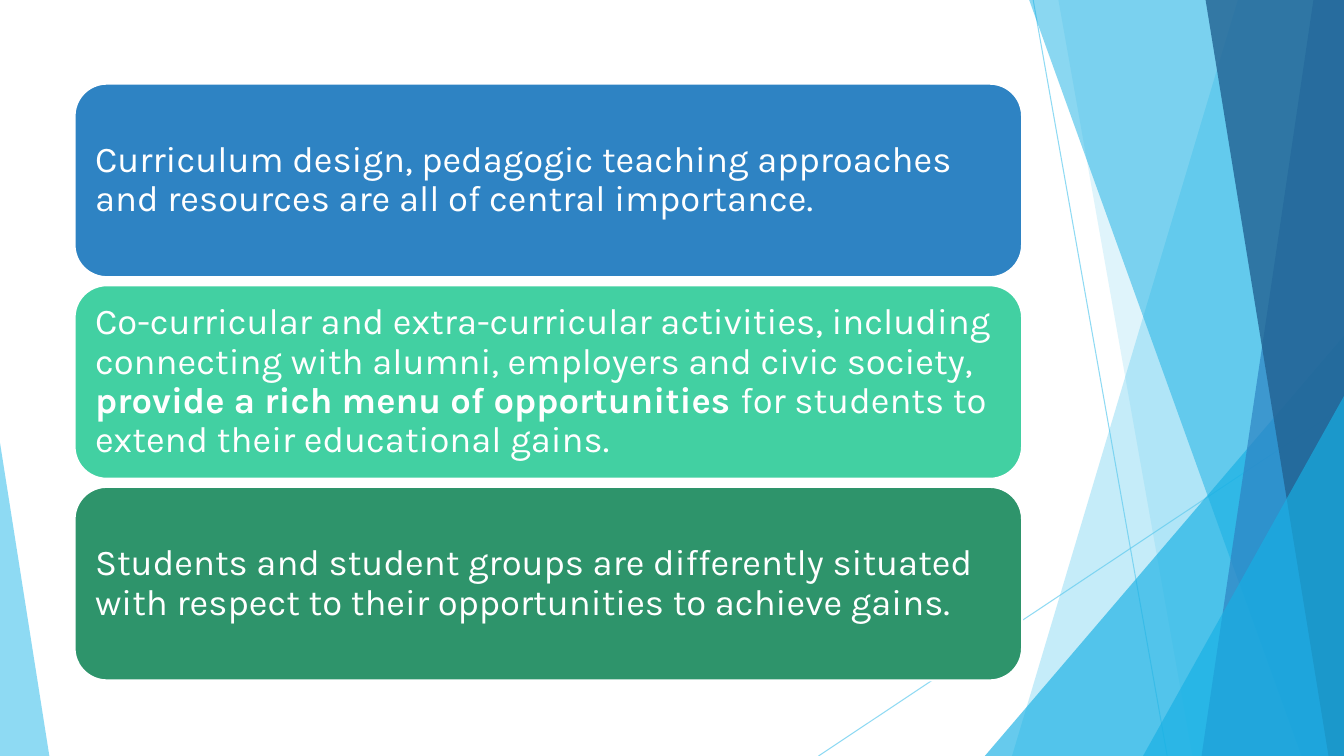
"""Build a slide with three stacked message cards and a faceted blue backdrop."""
from pptx import Presentation
from pptx.dml.color import RGBColor
from pptx.enum.shapes import MSO_CONNECTOR, MSO_SHAPE
from pptx.enum.text import MSO_ANCHOR, PP_ALIGN
from pptx.oxml.ns import qn
from pptx.util import Inches, Pt
from lxml.etree import SubElement

theme = {
    "sky": "5FCBEF", "cyan": "17B0E4", "blue": "2E83C3", "navy": "226292",
    "mint": "42D0A2", "green": "2E946B", "white": "FFFFFF",
    "font": "Karla", "size": Pt(26), "hair": Pt(0.75), "edge": Pt(1.5),
}

deck = Presentation()
deck.slide_width, deck.slide_height = Inches(13.33), Inches(7.5)
slide = deck.slides.add_slide(deck.slide_layouts[6])
shapes = slide.shapes
COLS, ROWS = 40, 30
col, row = deck.slide_width / COLS, deck.slide_height / ROWS


def grid(*spots):
    """Turn alternating columns and rows into slide lengths."""
    return [round(n * (row if i % 2 else col)) for i, n in enumerate(spots)]


def tint(fill, name, share=100):
    """Fill with a theme colour at a share of full opacity."""
    fill.solid()
    fill.fore_color.rgb = RGBColor.from_string(theme[name])
    if share < 100:
        tone = fill._xPr.find(qn("a:solidFill"))[0]
        SubElement(tone, qn("a:alpha"), val=str(share * 1000))


for ends in [(30.75, 0, 34.74, ROWS), (COLS, 16.12, 24.36, ROWS)]:
    ray = shapes.add_connector(MSO_CONNECTOR.STRAIGHT, *grid(*ends))
    ray.line.width = theme["hair"]
    tint(ray.line.fill, "sky", 70)
    SubElement(ray._element.spPr, qn("a:effectLst"))

facets = [
    ("panel", (36.84, 30.12), "sky", 36),
    ("panel", (31.5, 35.49), "sky", 20),
    ("peak", (29.31, 13.32, COLS, 1), "cyan", 66),
    ("panel", (30.63, 38.73), "cyan", 50),
    ("panel", (39.09, 35.76), "blue", 70),
    ("panel", (35.88, 39.54), "navy", 80),
    ("peak", (34.02, 15.72, COLS, 1), "cyan", 66),
    ("peak", (0, 17.56, 1.47, 0), "sky", 70),
]
for kind, place, tone, share in facets:
    if kind == "panel":
        head, foot = place
        pen = shapes.build_freeform(*grid(head, 0))
        pen.add_line_segments([grid(COLS, 0), grid(COLS, ROWS), grid(foot, ROWS)])
        facet = pen.convert_to_shape()
    else:
        left, top, right, tip = place
        box = grid(left, top, right - left, ROWS - top)
        facet = shapes.add_shape(MSO_SHAPE.ISOSCELES_TRIANGLE, *box)
        facet.adjustments[0] = tip
    facet.shadow.inherit = False
    facet.line.fill.background()
    tint(facet.fill, tone, share)

cards = [
    ("blue", [("Curriculum design, pedagogic teaching approaches and resources "
               "are all of central importance.", False)]),
    ("mint", [("Co-curricular and extra-curricular activities, including connecting "
               "with alumni, employers and civic society, ", False),
              ("provide a rich menu of opportunities ", True),
              ("for students to extend their educational gains.", False)]),
    ("green", [("Students and student groups are differently situated with respect "
                "to their opportunities to achieve gains.", False)]),
]
for rank, (tone, parts) in enumerate(cards):
    box = grid(2.22, 3.32 + 8 * rank, 28.2, 7.68)
    card = shapes.add_shape(MSO_SHAPE.ROUNDED_RECTANGLE, *box)
    card.shadow.inherit = False
    tint(card.fill, tone)
    tint(card.line.fill, "white")
    card.line.width = theme["edge"]
    frame = card.text_frame
    frame.word_wrap = True
    frame.vertical_anchor = MSO_ANCHOR.MIDDLE
    frame.margin_left = frame.margin_right = Inches(0.11)
    frame.margin_top = frame.margin_bottom = Inches(0.11)
    para = frame.paragraphs[0]
    para.alignment = PP_ALIGN.LEFT
    para.line_spacing = 0.9
    para.font.name, para.font.size = theme["font"], theme["size"]
    tint(para.font.fill, "white")
    for words, bold in parts:
        run = para.add_run()
        run.text = words
        if bold:
            run.font.bold = True

deck.save("out.pptx")
